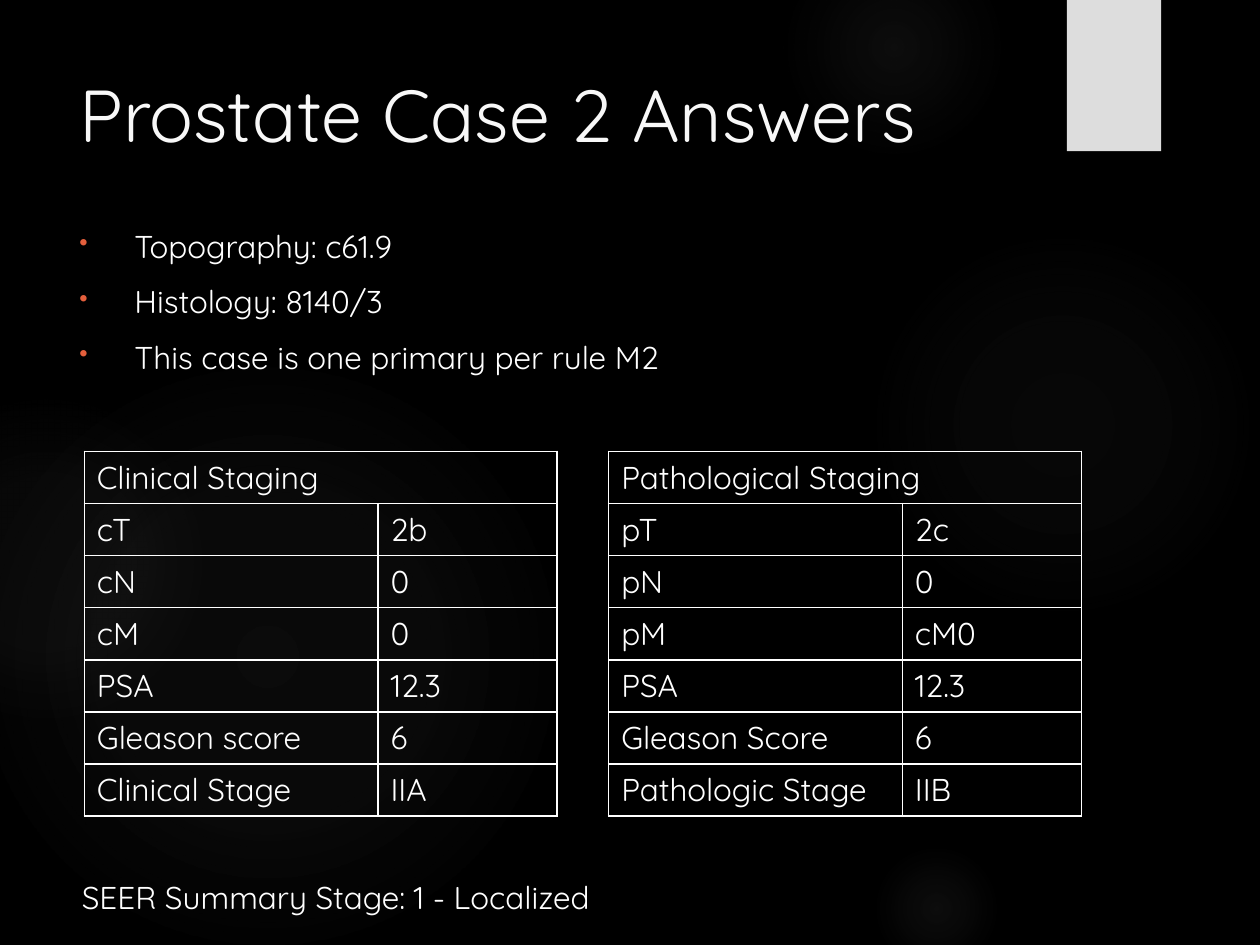
"""Build the slide with the answers to prostate case 2."""
from dataclasses import dataclass

from pptx import Presentation
from pptx.dml.color import RGBColor
from pptx.enum.shapes import MSO_SHAPE
from pptx.enum.text import MSO_ANCHOR
from pptx.oxml import parse_xml
from pptx.oxml.ns import nsdecls, qn
from pptx.slide import Slide
from pptx.table import _Cell
from pptx.text.text import TextFrame, _Paragraph
from pptx.util import Cm, Pt

BLACK = RGBColor(0x00, 0x00, 0x00)
WHITE = RGBColor(0xFF, 0xFF, 0xFF)
TITLE_WHITE = RGBColor(0xF8, 0xF8, 0xF8)
TAB_GREY = RGBColor(0xDD, 0xDD, 0xDD)
GLOW_GREY = RGBColor(0x5F, 0x5F, 0x5F)
BULLET_ORANGE = RGBColor(0xE4, 0x5F, 0x3C)
FONT = "Quicksand"
BODY_SIZE = 18
TABLE_TOP = 9.1
COLUMN_WIDTHS = (5.92, 3.61)
ROW_HEIGHT = 1.05


@dataclass(frozen=True)
class Glow:
    """A soft round light, in centimetres, with (position, opacity) stops."""

    left: float
    top: float
    diameter: float
    stops: tuple[tuple[int, int], ...]


@dataclass(frozen=True)
class StagingTable:
    """A staging table with a merged heading row."""

    left: float
    heading: str
    rows: tuple[tuple[str, str], ...]


GLOWS = (
    Glow(17.5, 4.65, 7.82, ((0, 7), (36, 6), (69, 0))),
    Glow(15.8, -1.27, 4.45, ((0, 14), (36, 7), (73, 0))),
    Glow(17.5, 16.94, 2.74, ((0, 14), (36, 7), (66, 0))),
    Glow(-0.43, 7.42, 11.63, ((0, 11), (36, 10), (75, 0))),
    Glow(-2.34, 8.05, 6.55, ((0, 8), (36, 8), (72, 0))),
)
FINDINGS = (
    "Topography: c61.9",
    "Histology: 8140/3",
    "This case is one primary per rule M2",
)
TABLES = (
    StagingTable(1.7, "Clinical Staging", (
        ("cT", "2b"), ("cN", "0"), ("cM", "0"), ("PSA", "12.3"),
        ("Gleason score", "6"), ("Clinical Stage", "IIA"),
    )),
    StagingTable(12.27, "Pathological Staging", (
        ("pT", "2c"), ("pN", "0"), ("pM", "cM0"), ("PSA", "12.3"),
        ("Gleason Score", "6"), ("Pathologic Stage", "IIB"),
    )),
)


def add_glow(slide: Slide, glow: Glow) -> None:
    """Draw one glow with a radial gradient."""
    shape = slide.shapes.add_shape(
        MSO_SHAPE.OVAL, Cm(glow.left), Cm(glow.top), Cm(glow.diameter), Cm(glow.diameter)
    )
    shape.shadow.inherit = False
    shape.line.fill.background()
    stops = "".join(
        f'<a:gs pos="{position * 1000}"><a:srgbClr val="{GLOW_GREY}">'
        f'<a:alpha val="{opacity * 1000}"/></a:srgbClr></a:gs>'
        for position, opacity in glow.stops
    )
    gradient = parse_xml(
        f'<a:gradFill {nsdecls("a")} rotWithShape="1"><a:gsLst>{stops}</a:gsLst>'
        '<a:path path="circle"><a:fillToRect l="50000" t="50000" r="50000" b="50000"/>'
        "</a:path></a:gradFill>"
    )
    shape._element.spPr.find(qn("a:prstGeom")).addnext(gradient)


def add_corner_tab(slide: Slide) -> None:
    """Draw the grey tab at the top edge with its soft shadow."""
    shape = slide.shapes.add_shape(MSO_SHAPE.RECTANGLE, Cm(21.51), Cm(0), Cm(1.9), Cm(3.05))
    shape.fill.solid()
    shape.fill.fore_color.rgb = TAB_GREY
    shape.line.fill.background()
    shape.shadow.inherit = False
    shape._element.spPr.find(qn("a:effectLst")).append(parse_xml(
        f'<a:outerShdw {nsdecls("a")} blurRad="{Pt(3)}" dist="{Pt(2)}" dir="5400000">'
        f'<a:srgbClr val="{BLACK}"><a:alpha val="45000"/></a:srgbClr></a:outerShdw>'
    ))


def add_run(paragraph: _Paragraph, text: str, size: int = BODY_SIZE,
            color: RGBColor = WHITE) -> None:
    """Add one formatted run to a paragraph."""
    run = paragraph.add_run()
    run.text = text
    run.font.name = FONT
    run.font.size = Pt(size)
    run.font.color.rgb = color


def add_text_frame(slide: Slide, left: float, top: float, width: float,
                   height: float) -> TextFrame:
    """Add a wrapping, top-anchored text box and return its frame."""
    text_frame = slide.shapes.add_textbox(Cm(left), Cm(top), Cm(width), Cm(height)).text_frame
    text_frame.word_wrap = True
    text_frame.vertical_anchor = MSO_ANCHOR.TOP
    return text_frame


def format_bullet(paragraph: _Paragraph) -> None:
    """Give a paragraph a hanging orange bullet."""
    paragraph.space_before = Pt(10)
    properties = paragraph._p.get_or_add_pPr()
    properties.set("marL", str(Cm(1.11)))
    properties.set("indent", str(Cm(-1.11)))
    for markup in (
        f'<a:buClr {nsdecls("a")}><a:srgbClr val="{BULLET_ORANGE}"/></a:buClr>',
        f'<a:buSzPct {nsdecls("a")} val="79000"/>',
        f'<a:buChar {nsdecls("a")} char="•"/>',
        f'<a:tabLst {nsdecls("a")}><a:tab pos="{Cm(1.09)}" algn="l"/></a:tabLst>',
    ):
        properties.append(parse_xml(markup))


def format_cell(cell: _Cell) -> None:
    """Draw white borders around a cell and leave it unfilled."""
    properties = cell._tc.get_or_add_tcPr()
    for side in ("lnL", "lnR", "lnT", "lnB"):
        properties.append(parse_xml(
            f'<a:{side} {nsdecls("a")} w="{Pt(1)}"><a:solidFill>'
            f'<a:srgbClr val="{WHITE}"/></a:solidFill></a:{side}>'
        ))
    cell.fill.background()


def add_staging_table(slide: Slide, staging: StagingTable) -> None:
    """Draw one staging table."""
    row_count = len(staging.rows) + 1
    table = slide.shapes.add_table(
        row_count, len(COLUMN_WIDTHS), Cm(staging.left), Cm(TABLE_TOP),
        Cm(sum(COLUMN_WIDTHS)), Cm(ROW_HEIGHT * row_count)
    ).table
    table.first_row = False
    table.horz_banding = False
    for column, width in zip(table.columns, COLUMN_WIDTHS):
        column.width = Cm(width)
    for cell in table.iter_cells():
        format_cell(cell)
    table.cell(0, 0).merge(table.cell(0, 1))
    add_run(table.cell(0, 0).text_frame.paragraphs[0], staging.heading)
    for row_index, row in enumerate(staging.rows, start=1):
        for column_index, text in enumerate(row):
            add_run(table.cell(row_index, column_index).text_frame.paragraphs[0], text)


def main() -> None:
    """Build and save the presentation."""
    presentation = Presentation()
    presentation.slide_width = Cm(25.4)
    presentation.slide_height = Cm(19.05)
    slide = presentation.slides.add_slide(presentation.slide_layouts[6])
    slide.background.fill.solid()
    slide.background.fill.fore_color.rgb = BLACK

    for glow in GLOWS:
        add_glow(slide, glow)
    add_corner_tab(slide)

    title = add_text_frame(slide, 1.35, 1.27, 19.61, 3.89)
    add_run(title.paragraphs[0], "Prostate Case 2 Answers", 42, TITLE_WHITE)

    body = add_text_frame(slide, 1.35, 4.45, 22.58, 3.81)
    for index, finding in enumerate(FINDINGS):
        paragraph = body.add_paragraph() if index else body.paragraphs[0]
        format_bullet(paragraph)
        add_run(paragraph, finding)

    for staging in TABLES:
        add_staging_table(slide, staging)

    summary = add_text_frame(slide, 1.4, 17.58, 18.62, 1.02)
    add_run(summary.paragraphs[0], "SEER Summary Stage: 1 - Localized")

    presentation.save("out.pptx")


if __name__ == "__main__":
    main()
